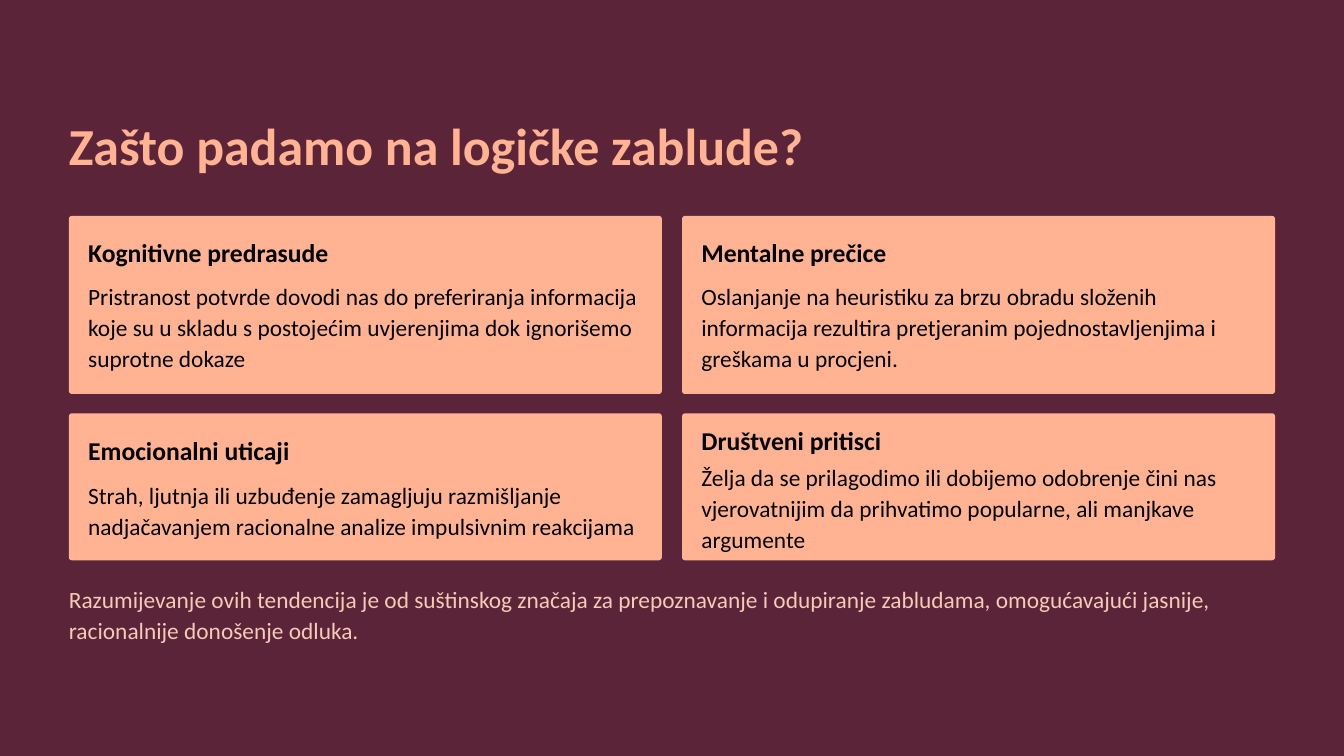
from dataclasses import dataclass

from pptx import Presentation
from pptx.dml.color import RGBColor
from pptx.enum.shapes import MSO_SHAPE
from pptx.enum.text import MSO_ANCHOR, MSO_AUTO_SIZE, PP_ALIGN
from pptx.util import Inches, Pt


@dataclass(frozen=True)
class Theme:
    font: str = "Calibri"
    background: RGBColor = RGBColor(0x5C, 0x24, 0x38)
    accent: RGBColor = RGBColor(0xFF, 0xB3, 0x93)
    ink: RGBColor = RGBColor(0, 0, 0)
    closing: RGBColor = RGBColor(0xF4, 0xCA, 0xB8)
    title_size: float = 44.5
    heading_size: float = 22
    body_size: float = 20
    title_spacing: float = 56
    heading_spacing: float = 28
    body_spacing: float = 26.5


def write(shape, text, size, spacing, color, bold=False, wrap=True):
    frame = shape.text_frame
    frame.text = text
    frame.word_wrap = wrap
    frame.auto_size = MSO_AUTO_SIZE.NONE
    frame.vertical_anchor = MSO_ANCHOR.TOP
    frame.margin_left = frame.margin_right = 0
    frame.margin_top = frame.margin_bottom = 0
    paragraph = frame.paragraphs[0]
    paragraph.alignment = PP_ALIGN.LEFT
    paragraph.line_spacing = Pt(spacing)
    font = paragraph.runs[0].font
    font.name = theme.font
    font.size = Pt(size)
    font.bold = bold
    font.color.rgb = color


def place(left, top, width, height):
    return [Inches(length) for length in (left, top, width, height)]


theme = Theme()
presentation = Presentation()
presentation.slide_width = Inches(16)
presentation.slide_height = Inches(9)
slide = presentation.slides.add_slide(presentation.slide_layouts[5])
slide.background.fill.solid()
slide.background.fill.fore_color.rgb = theme.background

margin = 0.82
content_width = 16 - 2 * margin
gap = 0.24
padding = 0.23
card_width = (content_width - gap) / 2
corner_radius = 0.036

title = slide.shapes.title
title.left, title.top, title.width, title.height = place(margin, 1.32, 10.91, 0.78)
write(title, "Zašto padamo na logičke zablude?", theme.title_size,
      theme.title_spacing, theme.accent, bold=True, wrap=False)

rows = [
    (2.57, 2.12, [
        ("Kognitivne predrasude", 0.23, 0.76,
         "Pristranost potvrde dovodi nas do preferiranja informacija koje su u skladu "
         "s postojećim uvjerenjima dok ignorišemo suprotne dokaze"),
        ("Mentalne prečice", 0.23, 0.76,
         "Oslanjanje na heuristiku za brzu obradu složenih informacija rezultira "
         "pretjeranim pojednostavljenjima i greškama u procjeni."),
    ]),
    (4.92, 1.75, [
        ("Emocionalni uticaji", 0.24, 0.77,
         "Strah, ljutnja ili uzbuđenje zamagljuju razmišljanje nadjačavanjem "
         "racionalne analize impulsivnim reakcijama"),
        ("Društveni pritisci", 0.12, 0.56,
         "Želja da se prilagodimo ili dobijemo odobrenje čini nas vjerovatnijim "
         "da prihvatimo popularne, ali manjkave argumente"),
    ]),
]

for top, height, cards in rows:
    for column, (heading, heading_offset, body_offset, body) in enumerate(cards):
        left = margin + column * (card_width + gap)
        card = slide.shapes.add_shape(
            MSO_SHAPE.ROUNDED_RECTANGLE, *place(left, top, card_width, height))
        card.adjustments[0] = corner_radius / height
        card.shadow.inherit = False
        card.fill.solid()
        card.fill.fore_color.rgb = theme.accent
        card.line.fill.background()

        text_left = left + padding
        heading_box = slide.shapes.add_textbox(
            *place(text_left, top + heading_offset, 3.12, 0.39))
        write(heading_box, heading, theme.heading_size, theme.heading_spacing,
              theme.ink, bold=True, wrap=False)
        body_box = slide.shapes.add_textbox(
            *place(text_left, top + body_offset, card_width - 2 * padding, height - 1))
        write(body_box, body, theme.body_size, theme.body_spacing, theme.ink)

closing_box = slide.shapes.add_textbox(*place(margin, 6.93, content_width, 0.75))
write(closing_box,
      "Razumijevanje ovih tendencija je od suštinskog značaja za prepoznavanje i "
      "odupiranje zabludama, omogućavajući jasnije, racionalnije donošenje odluka.",
      theme.body_size, theme.body_spacing, theme.closing)

presentation.save("out.pptx")
